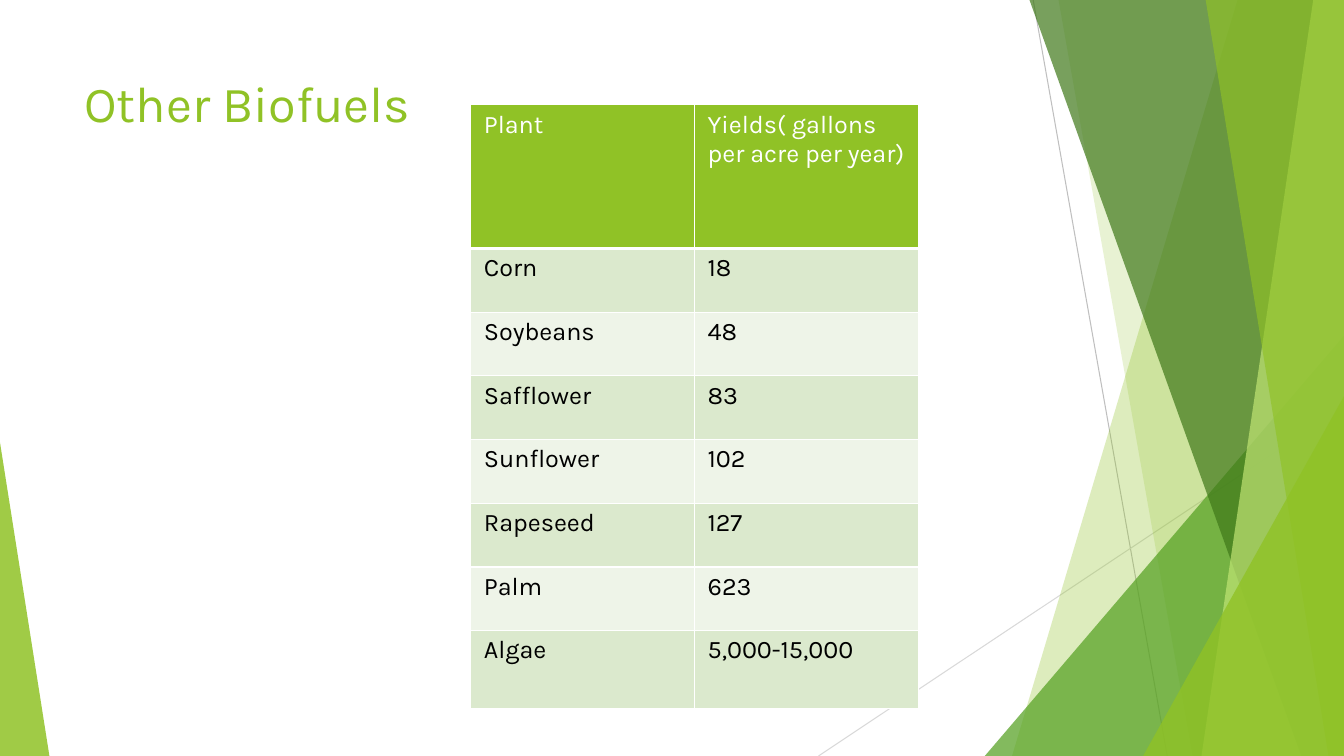
from dataclasses import dataclass

from lxml.etree import SubElement
from pptx import Presentation
from pptx.dml.color import RGBColor
from pptx.enum.shapes import MSO_CONNECTOR as CONNECTOR, MSO_SHAPE as SHAPE
from pptx.enum.text import MSO_ANCHOR as ANCHOR
from pptx.oxml.ns import qn
from pptx.util import Pt


@dataclass(frozen=True)
class Theme:
    font: str = "Karla"
    title_size: int = 36
    table_size: int = 18
    lime: str = "90C226"
    pale_lime: str = "C0E474"
    green: str = "54A021"
    dark_green: str = "3F7819"
    band_dark: str = "DBE9CD"
    band_light: str = "EEF4E8"
    white: str = "FFFFFF"
    black: str = "000000"
    gray: str = "BFBFBF"
    light_gray: str = "D9D9D9"


def finish_shard(shape, color, opacity):
    """Give a shape a see-through fill without outline or shadow."""
    shape.shadow.inherit = False
    shape.line.fill.background()
    shape.fill.solid()
    shape.fill.fore_color.rgb = RGBColor.from_string(color)
    color_node = shape._element.spPr.find(qn("a:solidFill"))[0]
    SubElement(color_node, qn("a:alpha"), val=str(opacity * 1000))


def set_border(cell, side, width):
    """Draw one white cell border; side is L, R, T or B."""
    line = SubElement(cell._tc.get_or_add_tcPr(), qn(f"a:ln{side}"), w=str(Pt(width)))
    fill = SubElement(line, qn("a:solidFill"))
    SubElement(fill, qn("a:srgbClr"), val=theme.white)


theme = Theme()
WIDTH, HEIGHT = 960, 540
SHARD_TOP = -0.72

deck = Presentation()
deck.slide_width, deck.slide_height = Pt(WIDTH), Pt(HEIGHT)
page = deck.slides.add_slide(deck.slide_layouts[6])

# Thin background lines
for x1, y1, x2, y2, color in [
    (738, 0, 833.76, HEIGHT, theme.gray),
    (WIDTH, 290.16, 584.64, HEIGHT, theme.light_gray),
]:
    line = page.shapes.add_connector(CONNECTOR.STRAIGHT, Pt(x1), Pt(y1), Pt(x2), Pt(y2))
    line.line.color.rgb = RGBColor.from_string(color)
    line.line.width = Pt(0.75)
    SubElement(line._element.spPr, qn("a:effectLst"))

# Shards from back to front. Quads run from the top edge to the bottom edge
# and end at the right edge; triangles stand on the bottom edge.
shards = [
    ("quad", 884.16, 722.88, theme.lime, 30),
    ("quad", 756, 851.76, theme.lime, 20),
    ("triangle", (703.44, 239.76, 256.56), 1, theme.green, 72),
    ("quad", 735.12, 929.52, theme.dark_green, 70),
    ("quad", 938.16, 858.24, theme.pale_lime, 70),
    ("quad", 861.12, 948.96, theme.lime, 65),
    ("triangle", (816.48, 282.96, 143.52), 1, theme.lime, 80),
    ("triangle", (0, 316.08, 35.28), 0, theme.lime, 85),
]
for kind, start, end, color, opacity in shards:
    if kind == "quad":
        builder = page.shapes.build_freeform(Pt(start), Pt(SHARD_TOP))
        corners = [(WIDTH, SHARD_TOP), (WIDTH, HEIGHT), (end, HEIGHT)]
        builder.add_line_segments([(Pt(x), Pt(y)) for x, y in corners], close=True)
        shard = builder.convert_to_shape()
    else:
        left, top, width = start
        shard = page.shapes.add_shape(
            SHAPE.ISOSCELES_TRIANGLE, Pt(left), Pt(top), Pt(width), Pt(HEIGHT - top))
        shard.adjustments[0] = end
    finish_shard(shard, color, opacity)

# Title
title = page.shapes.add_textbox(Pt(53.28), Pt(48.24), Pt(676.8), Pt(103.68))
title.text_frame.word_wrap = True
title.text_frame.vertical_anchor = ANCHOR.TOP
para = title.text_frame.paragraphs[0]
para.text = "Other Biofuels"
para.font.name = theme.font
para.font.size = Pt(theme.title_size)
para.font.color.rgb = RGBColor.from_string(theme.lime)

# Yield table
yields = [
    ("Plant", "Yields( gallons per acre per year)"),
    ("Corn", "18"),
    ("Soybeans", "48"),
    ("Safflower", "83"),
    ("Sunflower", "102"),
    ("Rapeseed", "127"),
    ("Palm", "623"),
    ("Algae", "5,000-15,000"),
]
row_heights = [102.6] + [45.5] * 6 + [55.6]
table = page.shapes.add_table(
    len(yields), 2, Pt(336.24), Pt(74.88), Pt(319.68), Pt(sum(row_heights))).table
for column in table.columns:
    column.width = Pt(159.84)
for row_index, (texts, height) in enumerate(zip(yields, row_heights)):
    is_header = row_index == 0
    if is_header:
        fill_color = theme.lime
    else:
        fill_color = theme.band_dark if row_index % 2 else theme.band_light
    table.rows[row_index].height = Pt(height)
    for column_index, text in enumerate(texts):
        cell = table.cell(row_index, column_index)
        cell.margin_left = cell.margin_right = Pt(9.4)
        cell.margin_top = cell.margin_bottom = Pt(3.6)
        for side in "LRTB":
            set_border(cell, side, 3 if is_header and side == "B" else 1)
        cell.fill.solid()
        cell.fill.fore_color.rgb = RGBColor.from_string(fill_color)
        para = cell.text_frame.paragraphs[0]
        para.text = text
        para.font.name = theme.font
        para.font.size = Pt(theme.table_size)
        para.font.bold = False
        para.font.color.rgb = RGBColor.from_string(
            theme.white if is_header else theme.black)

deck.save("out.pptx")
